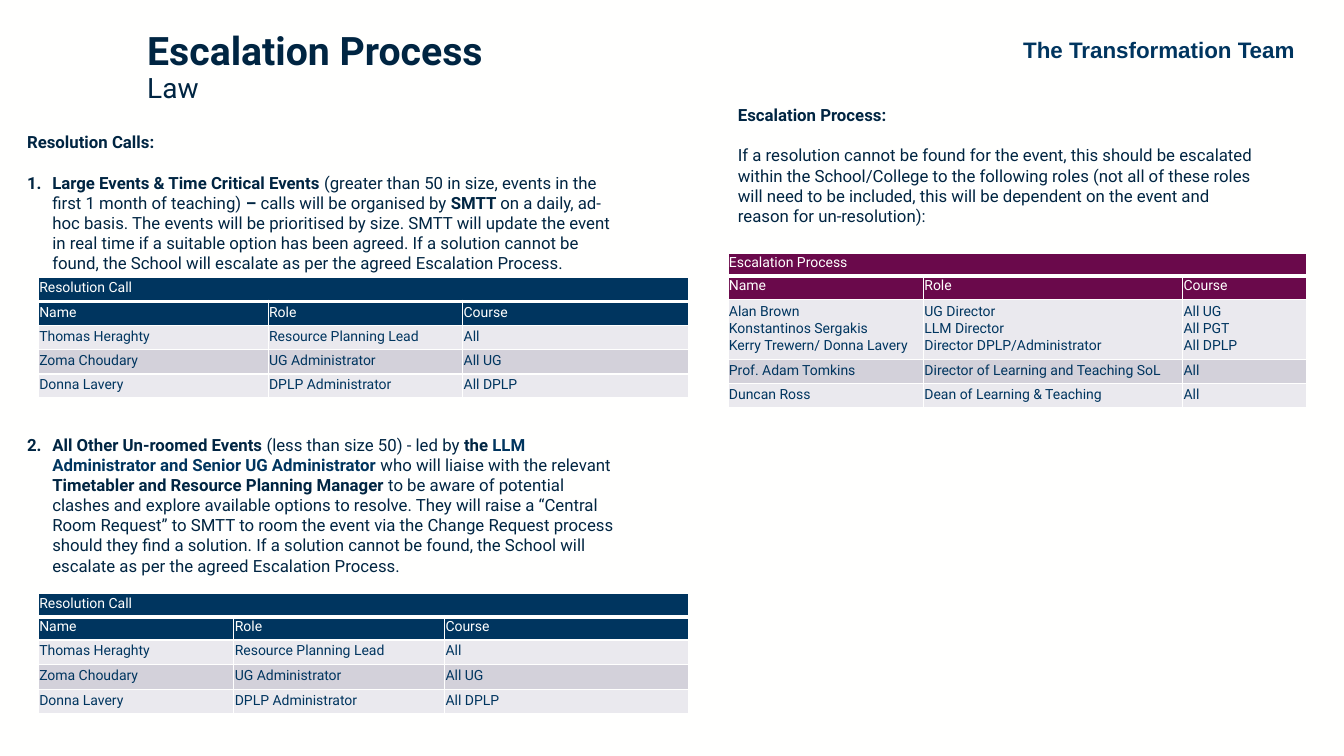
import pptx
import pptx.util
import pptx.dml.color
import pptx.enum.text
import pptx.oxml.ns
import lxml.etree

Pt = pptx.util.Pt
Inches = pptx.util.Inches
ALIGN = pptx.enum.text.PP_ALIGN
ANCHOR = pptx.enum.text.MSO_ANCHOR
FIT = pptx.enum.text.MSO_AUTO_SIZE
WIDE, HIGH = Inches(13.33), Inches(7.5)
FONT = "Roboto"
LINE = 14.4  # height of a body line in points
COLORS = {"paper": "FFFFFE", "ink": "002542", "navy": "00355F",
          "plum": "6A094B", "pale": "EAE9EE", "grey": "D3D1DA"}

HEADS = ("Name", "Role", "Course")
CALLS = [("Thomas Heraghty", "Resource Planning Lead", "All"),
         ("Zoma Choudary", "UG Administrator", "All UG"),
         ("Donna Lavery", "DPLP Administrator", "All DPLP")]
ROLES = [("Alan Brown\nKonstantinos Sergakis\nKerry Trewern/ Donna Lavery",
          "UG Director\nLLM Director\nDirector DPLP/Administrator",
          "All UG\nAll PGT\nAll DPLP"),
         ("Prof. Adam Tomkins", "Director of Learning and Teaching SoL", "All"),
         ("Duncan Ross", "Dean of Learning & Teaching", "All")]

# Runs are (text, bold) with an optional colour name
LARGE = [
    ("Large Events & Time Critical Events ", True),
    ("(greater than 50 in size, events in the first 1 month of teaching) ", False),
    ("– ", True),
    ("calls will be organised by ", False),
    ("SMTT ", True),
    ("on a daily, ad-hoc basis. The events will be prioritised by size. SMTT "
     "will update the event in real time if a suitable option has been agreed. "
     "If a solution cannot be found, the School will escalate as per the agreed "
     "Escalation Process.", False)]
OTHER = [
    ("All Other Un-roomed Events ", True),
    ("(less than size 50) - led by ", False),
    ("the ", True),
    ("LLM Administrator and Senior UG Administrator ", True, "navy"),
    ("who will liaise with the relevant ", False),
    ("Timetabler and Resource Planning Manager ", True),
    ("to be aware of potential clashes and explore available options to "
     "resolve. They will raise a “Central Room Request” to SMTT to room the "
     "event via the Change Request process should they find a solution. If a "
     "solution cannot be found, the School will escalate as per the agreed "
     "Escalation Process.", False)]
ROUTE = ("If a resolution cannot be found for the event, this should be escalated "
         "within the School/College to the following roles (not all of these "
         "roles will need to be included, this will be dependent on the event "
         "and reason for un-resolution):")


def tint(name):
    return pptx.dml.color.RGBColor.from_string(COLORS[name])


def across(share):
    """Percent of the slide's width."""
    return round(WIDE * share / 100)


def down(share):
    """Percent of the slide's height."""
    return round(HIGH * share / 100)


def place(x, y, w, h):
    return across(x), down(y), across(w), down(h)


def style(font, size, color, bold=None, name=FONT):
    font.name, font.size, font.bold = name, Pt(size), bold
    font.color.rgb = tint(color)


def add_sub(parent, tag, **attrs):
    return lxml.etree.SubElement(parent, pptx.oxml.ns.qn(tag), attrs)


def add_box(slide, area):
    box = slide.shapes.add_textbox(*place(*area))
    frame = box.text_frame
    frame.word_wrap = True
    frame.auto_size = FIT.SHAPE_TO_FIT_TEXT
    return frame


def add_para(frame, runs, gap=0, item=False):
    """Add a body paragraph, followed by a gap given in lines."""
    para = frame.paragraphs[0]
    if para.runs:
        para = frame.add_paragraph()
    if item:
        props = para._p.get_or_add_pPr()
        props.set("marL", str(Inches(0.25)))
        props.set("indent", str(-Inches(0.25)))
        add_sub(props, "a:buFont", typeface="+mj-lt")
        add_sub(props, "a:buAutoNum", type="arabicPeriod")
    if gap:
        para.space_after = Pt(gap * LINE)
    style(para.font, 12, "ink")
    for text, bold, *color in runs:
        run = para.add_run()
        run.text, run.font.bold = text, bold
        if color:
            run.font.color.rgb = tint(color[0])


def add_edges(cell, top=1, base=1):
    props = cell._tc.get_or_add_tcPr()
    widths = {"a:lnL": 1, "a:lnR": 1, "a:lnT": top, "a:lnB": base}
    for spot, (tag, width) in enumerate(widths.items()):
        line = add_sub(props, tag, w=str(Pt(width)))
        fill = add_sub(line, "a:solidFill")
        add_sub(fill, "a:srgbClr", val=COLORS["paper"])
        props.insert(spot, line)


def fill_cell(cell, text, back, ink):
    cell.fill.solid()
    cell.fill.fore_color.rgb = tint(back)
    cell.margin_left = cell.margin_right = cell.margin_top = Inches(0.01)
    cell.margin_bottom = Inches(0.05)
    cell.vertical_anchor = ANCHOR.BOTTOM
    cell.text = text
    for para in cell.text_frame.paragraphs:
        if ink == "navy":
            para.line_spacing = 1.07
        style(para.font, 10, ink, False)


def add_grid(slide, spot, cols, rows, title, color, body):
    """Add a table with a merged title row, a header row and striped rows."""
    data = [(title, "", ""), HEADS, *body]
    area = place(*spot, sum(cols), sum(rows))
    grid = slide.shapes.add_table(len(data), len(cols), *area).table
    for col, width in zip(grid.columns, cols):
        col.width = across(width)
    for r, texts in enumerate(data):
        grid.rows[r].height = down(rows[r])
        back = color if r < 2 else ("pale", "grey")[r % 2]
        ink = "paper" if r < 2 else "navy"
        for c, text in enumerate(texts):
            cell = grid.cell(r, c)
            fill_cell(cell, text, back, ink)
            add_edges(cell, 3 if r == 1 else 1, 3 if r == 0 else 1)
    grid.cell(0, 0).merge(grid.cell(0, len(cols) - 1))


def set_title(slide, main_line, sub_line):
    title = slide.shapes.title
    title.left, title.top, title.width, title.height = place(10.2, 1.2, 31.73, 15.6)
    frame = title.text_frame
    frame.auto_size = FIT.NONE
    frame.vertical_anchor = ANCHOR.MIDDLE
    para = frame.paragraphs[0]
    para.alignment, para.line_spacing = ALIGN.LEFT, 0.9
    head = para.add_run()
    head.text = main_line
    style(head.font, 28, "ink", True)
    para.add_line_break()
    tail = para.add_run()
    tail.text = sub_line
    style(tail.font, 20, "ink", False)


def main():
    deck = pptx.Presentation()
    deck.slide_width, deck.slide_height = WIDE, HIGH
    slide = deck.slides.add_slide(deck.slide_layouts[5])
    slide.background.fill.solid()
    slide.background.fill.fore_color.rgb = tint("paper")

    # Header
    set_title(slide, "Escalation Process", "Law")
    team = add_box(slide, (74.64, 4.13, 23.18, 4.93)).paragraphs[0]
    team.text, team.alignment = "The Transformation Team", ALIGN.CENTER
    style(team.font, 16, "navy", True, "Arial")

    # Left side: resolution calls
    calls = add_box(slide, (1.28, 16.8, 45.46, 60.53))
    add_para(calls, [("Resolution Calls:", True)], gap=1)
    add_para(calls, LARGE, gap=8, item=True)
    add_para(calls, OTHER, item=True)
    add_grid(slide, (2.85, 36.67), (17.1, 14.48, 16.8), [3.2] * 5,
             "Resolution Call", "navy", CALLS)
    add_grid(slide, (2.85, 78.53), (14.55, 15.68, 18.15), (3.07, 3.07, 3.2, 3.33, 3.2),
             "Resolution Call", "navy", CALLS)

    # Right side: escalation
    route = add_box(slide, (54.16, 13.2, 40.66, 20.13))
    add_para(route, [("Escalation Process:", True)], gap=1)
    add_para(route, [(ROUTE, False)])
    add_grid(slide, (54.16, 33.47), (14.55, 19.28, 9.23), (3.07, 3.07, 7.73, 3.2, 3.2),
             "Escalation Process", "plum", ROLES)

    deck.save("out.pptx")


if __name__ == "__main__":
    main()
